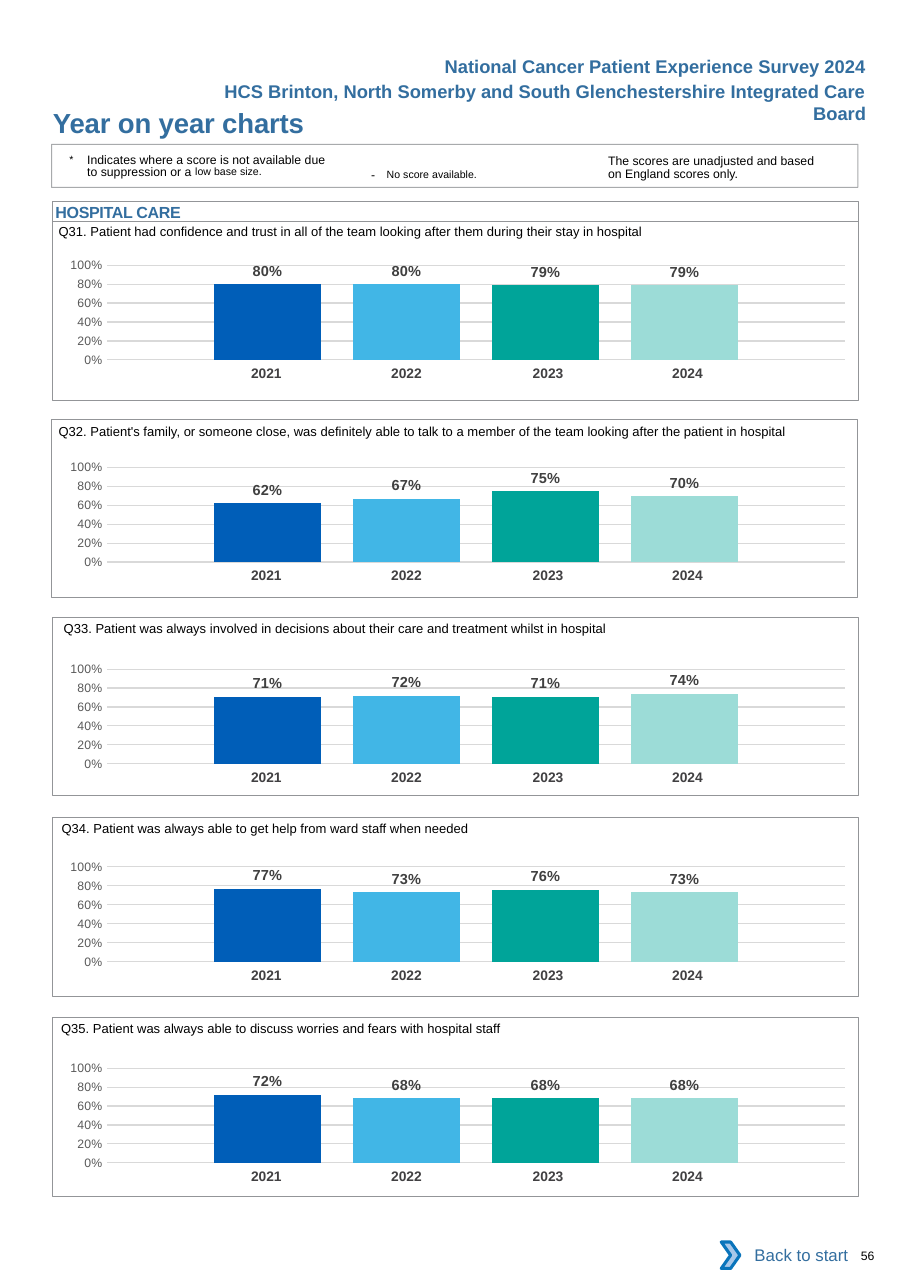
"""Builds the year on year charts page for the hospital care questions."""
from lxml import etree
from pptx import Presentation
from pptx import util as u
from pptx.chart import data as cd
from pptx.dml.color import RGBColor
from pptx.enum import chart as ch, shapes, text
from pptx.oxml import ns, parse_xml

HEADING = RGBColor(0x33, 0x6E, 0x9F)
BLACK = RGBColor(0, 0, 0)
WHITE = RGBColor(0xFF, 0xFF, 0xFF)
BORDER = RGBColor(0x93, 0x95, 0x98)
YEAR = RGBColor(0x41, 0x40, 0x42)
AXIS = RGBColor(0x59, 0x59, 0x59)
GRID = RGBColor(0xD9, 0xD9, 0xD9)
LABEL = RGBColor(0x40, 0x40, 0x40)
ARROW_FILL = RGBColor(0xA8, 0xC7, 0xE9)
ARROW_LINE = RGBColor(0x0A, 0x74, 0xBB)
BARS = [RGBColor(0x00, 0x5E, 0xB8), RGBColor(0x41, 0xB6, 0xE6),
        RGBColor(0x00, 0xA4, 0x99), RGBColor(0x9C, 0xDC, 0xD7)]
YEARS = ["2021", "2022", "2023", "2024"]
YEAR_WIDTHS = [3.23, 3.23, 3.4, 3.23]
YEAR_RIGHT_MARGINS = [0, 0, 0.1, 0.3]
LEFT, RIGHT = text.PP_ALIGN.LEFT, text.PP_ALIGN.RIGHT
NO_INSETS = (0, 0, 0, 0)
INSETS = (0.25, 0.13, 0.25, 0.13)

PANELS = [
    (1.22, 5.11, 5.64, 1.35, 4.93, (0.80, 0.80, 0.79, 0.79),
     "Q31. Patient had confidence and trust in all of the team looking after them during their stay in hospital"),
    (1.19, 9.67, 10.3, 1.35, 9.53, (0.62, 0.67, 0.75, 0.70),
     "Q32. Patient's family, or someone close, was definitely able to talk to a member of the team "
     "looking after the patient in hospital"),
    (1.22, 14.23, 14.95, 1.47, 14.07, (0.71, 0.72, 0.71, 0.74),
     "Q33. Patient was always involved in decisions about their care and treatment whilst in hospital"),
    (1.22, 18.85, 19.51, 1.42, 18.68, (0.77, 0.73, 0.76, 0.73),
     "Q34. Patient was always able to get help from ward staff when needed"),
    (1.22, 23.46, 24.15, 1.41, 23.29, (0.72, 0.68, 0.68, 0.68),
     "Q35. Patient was always able to discuss worries and fears with hospital staff"),
]


class Page:
    """Holds the font and the current slide, and adds each kind of element."""

    def __init__(self, slide, font="Arial"):
        self.s, self.font = slide, font

    def style(self, font, size, color, bold=False):
        font.name, font.size, font.bold = self.font, u.Pt(size), bold
        font.color.rgb = color

    def fill_text(self, sp, runs, size, color, bold=False, align=LEFT,
                  insets=NO_INSETS, anchor=text.MSO_ANCHOR.TOP):
        tf = sp.text_frame
        tf.word_wrap = True
        tf.vertical_anchor = anchor
        tf.margin_left, tf.margin_top, tf.margin_right, tf.margin_bottom = map(u.Cm, insets)
        p = tf.paragraphs[0]
        p.alignment = align
        self.style(p.font, size, color, bold)
        for words, run_size, attributes in [(runs, None, {})] if isinstance(runs, str) else runs:
            r = p.add_run()
            r.text = words
            if run_size:
                r.font.size = u.Pt(run_size)
            for name, value in attributes.items():
                r._r.get_or_add_rPr().set(name, value)
        return p

    def title(self, words, x, y, w, h):
        sp = self.s.shapes.title
        sp.left, sp.top, sp.width, sp.height = map(u.Cm, (x, y, w, h))
        self.fill_text(sp, [(words, None, {"spc": "-10"})], 18, HEADING, True)

    def text(self, runs, x, y, w, h, size=8, color=BLACK, **options):
        sp = self.s.shapes.add_textbox(*map(u.Cm, (x, y, w, h)))
        return self.fill_text(sp, runs, size, color, **options)

    def shape(self, x, y, w, h, fill=None, line=None, width=0.5,
              kind=shapes.MSO_SHAPE.RECTANGLE):
        sp = self.s.shapes.add_shape(kind, *map(u.Cm, (x, y, w, h)))
        sp.shadow.inherit = False
        if fill is None:
            sp.fill.background()
        else:
            sp.fill.solid()
            sp.fill.fore_color.rgb = fill
        if line is None:
            sp.line.fill.background()
        else:
            sp.line.color.rgb = line
            sp.line.width = u.Pt(width)
        return sp

    def years(self, x, y):
        table = self.s.shapes.add_table(
            1, len(YEARS), *map(u.Cm, (x, y, sum(YEAR_WIDTHS), 0.69))).table
        table.first_row = table.horz_banding = False
        for i, (year, width, margin) in enumerate(zip(YEARS, YEAR_WIDTHS, YEAR_RIGHT_MARGINS)):
            table.columns[i].width = u.Cm(width)
            cell = table.cell(0, i)
            cell.fill.background()
            cell.margin_left, cell.margin_right = u.Cm(0.25), u.Cm(margin)
            cell.text = year
            p = cell.text_frame.paragraphs[0]
            p.alignment = text.PP_ALIGN.CENTER
            self.style(p.font, 9, YEAR, True)

    def chart(self, values, x, y, w, h):
        data = cd.CategoryChartData(number_format="0%")
        data.categories = ["1"]
        for i, value in enumerate(values, 1):
            data.add_series(f"Series {i}", [value])
        chart = self.s.shapes.add_chart(
            ch.XL_CHART_TYPE.COLUMN_CLUSTERED, *map(u.Cm, (x, y, w, h)), data).chart
        chart.has_legend = chart.has_title = False
        chart.font.name, chart.font.size = "Calibri", u.Pt(10)
        chart.font.color.rgb = BLACK
        chart.category_axis.visible = False
        axis = chart.value_axis
        axis.minimum_scale, axis.maximum_scale, axis.major_unit = 0, 1, 0.2
        axis.major_tick_mark = axis.minor_tick_mark = ch.XL_TICK_MARK.NONE
        axis.format.line.fill.background()
        axis.major_gridlines.format.line.color.rgb = GRID
        axis.major_gridlines.format.line.width = u.Pt(0.75)
        axis.tick_labels.number_format = "0%"
        axis.tick_labels.number_format_is_linked = False
        self.style(axis.tick_labels.font, 8, AXIS)
        plot = chart.plots[0]
        plot.gap_width, plot.overlap, plot.vary_by_categories = 200, -30, False
        for series, color in zip(plot.series, BARS):
            series.format.fill.solid()
            series.format.fill.fore_color.rgb = color
            labels = series.data_labels
            labels.show_value = True
            labels.position = ch.XL_LABEL_POSITION.OUTSIDE_END
            labels.number_format, labels.number_format_is_linked = "0%", False
            self.style(labels.font, 9.5, LABEL, True)
        area = chart._chartSpace.find(".//" + ns.qn("c:plotArea"))
        for layout in area.findall(ns.qn("c:layout")):
            area.remove(layout)
        area.insert(0, parse_xml(
            f'<c:layout {ns.nsdecls("c")}><c:manualLayout><c:layoutTarget val="inner"/>'
            '<c:xMode val="edge"/><c:yMode val="edge"/><c:x val="0.079"/><c:y val="0.145"/>'
            '<c:w val="0.915"/><c:h val="0.666"/></c:manualLayout></c:layout>'))

    def panel(self, x, y, chart_y, question_x, question_y, values, question):
        self.years(4.4, chart_y + 2.67)
        self.chart(values, 1, chart_y, 18.59, 3.28)
        self.shape(x, y, 18.58, 4.11, line=BORDER)
        self.text(question, question_x, question_y, 18.3, 0.61, 8.5, insets=(0, 0.23, 0, 0))

    def legend(self):
        border = self.shape(1.19, 3.33, 18.59, 0.99, line=BORDER, width=0.75)
        for color in border._element.spPr.iter(ns.qn("a:srgbClr")):
            etree.SubElement(color, ns.qn("a:alpha")).set("val", "80000")
        insets = (0, 0.08, 0, 0)
        p = self.text([("*\t", 12, {"baseline": "3000"}),
                       ("Indicates where a score is not available due to suppression or a ", None, {}),
                       ("low base size.", 12, {"baseline": "7000"})],
                      1.6, 3.51, 6.02, 0.7, insets=insets)
        p.line_spacing = u.Pt(8.1)
        p._p.get_or_add_pPr().set("marL", str(u.Cm(0.41)))
        p._p.get_or_add_pPr().set("indent", str(u.Cm(-0.41)))
        self.text([("- ", None, {"spc": "260"}),
                   ("No score available.", 12, {"baseline": "3000"})],
                  8.31, 3.58, 4.65, 0.61, insets=INSETS)
        p = self.text("The scores are unadjusted and based on England scores only.",
                      14.02, 3.51, 4.95, 0.69, insets=insets)
        p.line_spacing = u.Pt(8.1)


def main():
    prs = Presentation()
    prs.slide_width, prs.slide_height = u.Cm(20.98), u.Cm(29.69)
    page = Page(prs.slides.add_slide(prs.slide_layouts[5]))
    page.title("Year on year charts", 1.22, 2.44, 11.43, 0.76)
    header = dict(size=12, color=HEADING, bold=True, align=RIGHT, insets=INSETS)
    page.text("National Cancer Patient Experience Survey 2024", 4.4, 1.15, 15.82, 0.76, **header)
    page.text("HCS Brinton, North Somerby and South Glenchestershire Integrated Care Board",
              4.4, 1.72, 15.82, 1.27, **header)
    page.legend()
    section = page.shape(1.22, 4.65, 18.58, 0.46, line=BORDER)
    page.fill_text(section, [("HOSPITAL CARE", None, {"spc": "-20"})], 10.5, HEADING, True,
                   insets=(0.06, 0.02, 0, 0))
    for panel in PANELS:
        page.panel(*panel)
    back = page.shape(16.81, 28.4, 3, 1.07, fill=WHITE)
    page.fill_text(back, "Back to start", 11, HEADING, align=RIGHT, insets=INSETS,
                   anchor=text.MSO_ANCHOR.MIDDLE)
    page.shape(16.63, 28.63, 0.43, 0.61, ARROW_FILL, ARROW_LINE, 2, shapes.MSO_SHAPE.CHEVRON)
    page.text("56", 19.85, 28.77, 1.05, 0.33)
    prs.save("out.pptx")


if __name__ == "__main__":
    main()
